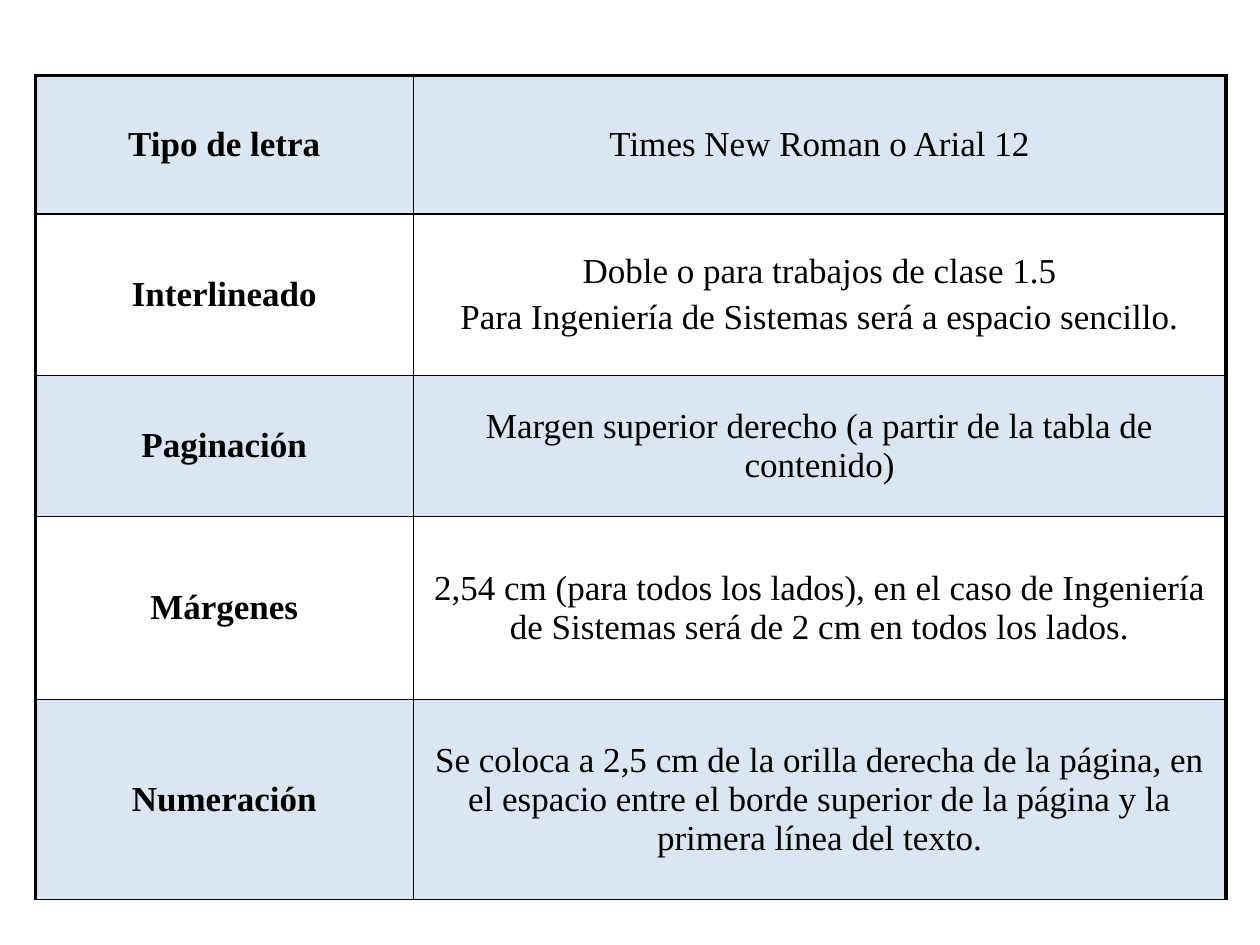
import pptx
import pptx.dml.color
import pptx.enum.text
import pptx.oxml
import pptx.oxml.ns
import pptx.util

NS = pptx.oxml.ns.nsdecls("a")
BLACK, BAND = "000000", "DCE6F2"
THICK, THIN = 2.25, 1


def color(value):
    return pptx.dml.color.RGBColor.from_string(value)


def set_borders(cell, widths):
    """Draw the left, right, top and bottom borders, in that order."""
    tcPr = cell._tc.get_or_add_tcPr()
    for i, (side, width) in enumerate(zip("LRTB", widths)):
        tcPr.insert(i, pptx.oxml.parse_xml(
            f'<a:ln{side} {NS} w="{pptx.util.Pt(width)}"><a:solidFill>'
            f'<a:srgbClr val="{BLACK}"/></a:solidFill></a:ln{side}>'))


prs = pptx.Presentation()
prs.slide_width = pptx.util.Inches(10)
prs.slide_height = pptx.util.Inches(7.5)
s = prs.slides.add_slide(prs.slide_layouts[6])

# Content: label, text, row height in inches
rows = [
    ("Tipo de letra", "Times New Roman o Arial 12", 1.1),
    ("Interlineado", "Doble o para trabajos de clase 1.5\n"
     "Para Ingeniería de Sistemas será a espacio sencillo.", 1.28),
    ("Paginación", "Margen superior derecho (a partir de la tabla de contenido)", 1.12),
    ("Márgenes", "2,54 cm (para todos los lados), en el caso de Ingeniería "
     "de Sistemas será de 2 cm en todos los lados.", 1.45),
    ("Numeración", "Se coloca a 2,5 cm de la orilla derecha de la página, en el "
     "espacio entre el borde superior de la página y la primera línea del texto.", 1.59),
]
cols = [3, 6.45]

# Table grid
height = sum(row[2] for row in rows)
table = s.shapes.add_table(
    len(rows), len(cols), pptx.util.Inches(0.28), pptx.util.Inches(0.6),
    pptx.util.Inches(sum(cols)), pptx.util.Inches(height)).table
table.first_row = table.horz_banding = False
for column, width in zip(table.columns, cols):
    column.width = pptx.util.Inches(width)

# Cells: banded rows, bold labels, heavy outer frame
for i, (label, text, row_height) in enumerate(rows):
    table.rows[i].height = pptx.util.Inches(row_height)
    for j, content in enumerate((label, text)):
        cell = table.cell(i, j)
        cell.vertical_anchor = pptx.enum.text.MSO_ANCHOR.MIDDLE
        if i % 2 == 0:
            cell.fill.solid()
            cell.fill.fore_color.rgb = color(BAND)
        else:
            cell.fill.background()
        set_borders(cell, (THICK if j == 0 else THIN, THICK if j == 1 else THIN,
                           THICK if i == 0 else THIN, THIN))
        tf = cell.text_frame
        tf.text = content
        for p in tf.paragraphs:
            p.alignment = pptx.enum.text.PP_ALIGN.CENTER
            p.space_before = pptx.util.Pt(4)
            for r in p.runs:
                r.font.name = "Times New Roman"
                r.font.size = pptx.util.Pt(20)
                r.font.bold = j == 0
                r.font.color.rgb = color(BLACK)

prs.save("out.pptx")
